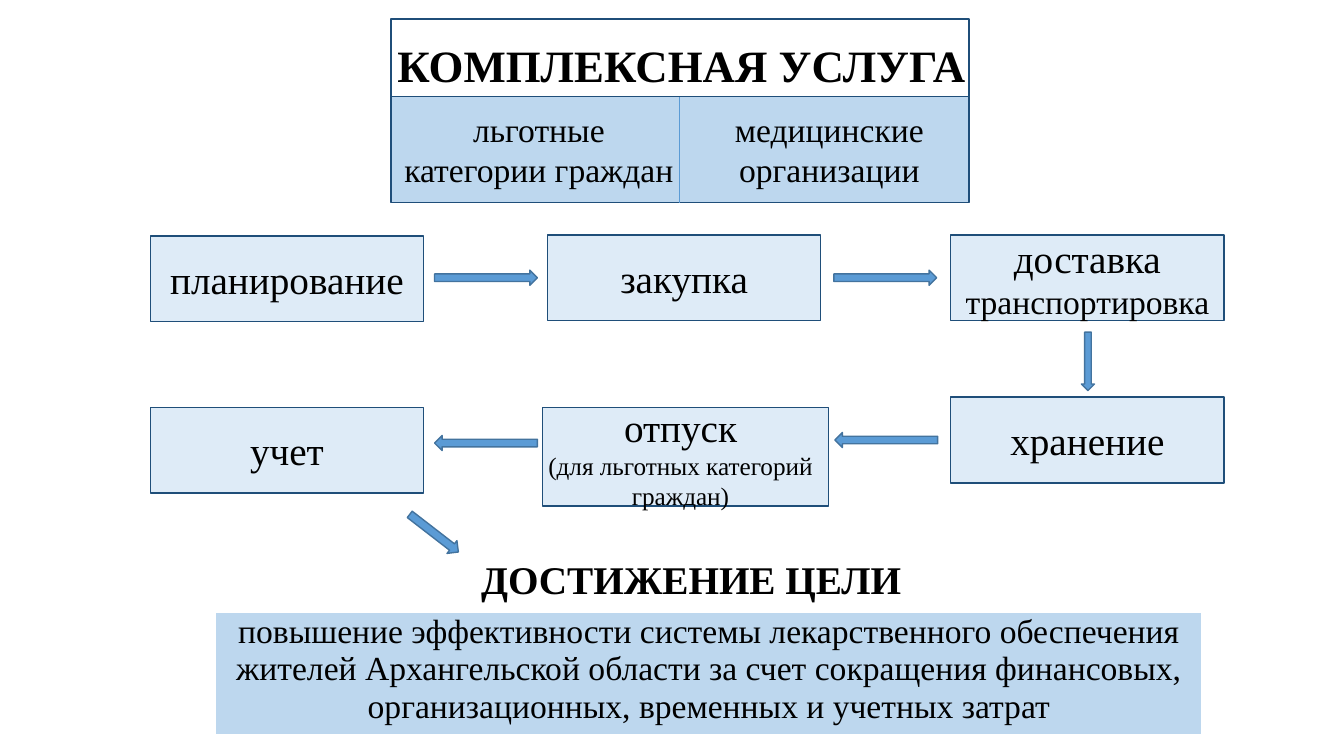
import pptx
import pptx.dml.color
import pptx.enum.shapes
import pptx.enum.text
import pptx.util
from lxml import etree

Inches = pptx.util.Inches
Pt = pptx.util.Pt
SHAPE = pptx.enum.shapes.MSO_SHAPE
ALIGN = pptx.enum.text.PP_ALIGN
ANCHOR = pptx.enum.text.MSO_ANCHOR

FONT = "Times New Roman"
COLORS = {
    "text": "000000",
    "white": "FFFFFF",
    "pale": "DEEBF7",
    "light": "BDD7EE",
    "border": "1F4E79",
    "arrow": "5B9BD5",
    "arrow_border": "43739E",
}
STEP_W, STEP_H = 2.71, 0.85
STEPS = [
    (1.49, 2.34, [("планирование", 28)]),
    (5.43, 2.33, [("закупка", 28)]),
    (9.43, 2.33, [("доставка", 28), ("транспортировка", 24)]),
    (9.43, 3.94, [("хранение", 28)]),
    (1.49, 4.04, [("учет", 28)]),
]
ARROWS = [
    (4.31, 2.68, 1.02, 0.15, 0),
    (8.27, 2.68, 1.02, 0.15, 0),
    (10.5, 3.52, 0.58, 0.13, 90),
    (8.28, 4.29, 1.02, 0.15, 180),
    (4.31, 4.32, 1.02, 0.15, 180),
    (4, 5.21, 0.61, 0.16, 37.7),
]
GOAL = (
    "повышение эффективности системы лекарственного обеспечения "
    "жителей Архангельской области за счет сокращения финансовых, "
    "организационных, временных и учетных затрат"
)


def rgb(name):
    return pptx.dml.color.RGBColor.from_string(COLORS[name])


def write(tf, lines, bold=False, align=ALIGN.CENTER):
    for i, (text, size) in enumerate(lines):
        p = tf.add_paragraph() if i else tf.paragraphs[0]
        p.alignment = align
        r = p.add_run()
        r.text = text
        r.font.name = FONT
        r.font.size = Pt(size)
        r.font.bold = bold
        r.font.color.rgb = rgb("text")


def set_margins(obj, left, top, right, bottom):
    obj.margin_left, obj.margin_top = Inches(left), Inches(top)
    obj.margin_right, obj.margin_bottom = Inches(right), Inches(bottom)


def add_shape(s, kind, at, fill, line):
    sp = s.shapes.add_shape(kind, *map(Inches, at))
    sp.shadow.inherit = False
    sp.fill.solid()
    sp.fill.fore_color.rgb = rgb(fill)
    sp.line.color.rgb = rgb(line)
    sp.line.width = Pt(1)
    return sp


def add_box(s, at, fill, lines=(), left=0.1, right=0.1):
    sp = add_shape(s, SHAPE.RECTANGLE, at, fill, "border")
    tf = sp.text_frame
    tf.word_wrap = True
    tf.vertical_anchor = ANCHOR.MIDDLE
    set_margins(tf, left, 0, right, 0)
    write(tf, lines)


def add_arrow(s, x, y, w, h, angle):
    sp = add_shape(s, SHAPE.RIGHT_ARROW, (x, y, w, h), "arrow", "arrow_border")
    sp.rotation = angle


def add_text(s, at, lines, bold=False, anchor=ANCHOR.TOP):
    tf = s.shapes.add_textbox(*map(Inches, at)).text_frame
    tf.word_wrap = True
    tf.vertical_anchor = anchor
    write(tf, lines, bold)


def add_divider(s, x, top, bottom):
    line = s.shapes.add_connector(
        pptx.enum.shapes.MSO_CONNECTOR.STRAIGHT,
        Inches(x), Inches(top), Inches(x), Inches(bottom),
    )
    line.line.color.rgb = rgb("arrow")
    line.line.width = Pt(0.5)
    etree.SubElement(line._element.spPr, pptx.oxml.ns.qn("a:effectLst"))


def set_title(s, at, text):
    title = s.shapes.title
    title.left, title.top, title.width, title.height = map(Inches, at)
    tf = title.text_frame
    tf.word_wrap = False
    tf.auto_size = pptx.enum.text.MSO_AUTO_SIZE.NONE
    tf.vertical_anchor = ANCHOR.TOP
    write(tf, [(text, 32)], bold=True, align=ALIGN.JUSTIFY)
    s.shapes._spTree.append(title._element)


def add_goal_table(s, at, text):
    table = s.shapes.add_table(1, 1, *map(Inches, at)).table
    table.first_row = False
    table.horz_banding = False
    cell = table.cell(0, 0)
    cell.fill.solid()
    cell.fill.fore_color.rgb = rgb("light")
    set_margins(cell, 0.01, 0.01, 0.01, 0)
    write(cell.text_frame, [(text, 24)])


def main():
    prs = pptx.Presentation()
    prs.slide_width, prs.slide_height = Inches(13.33), Inches(7.5)
    s = prs.slides.add_slide(prs.slide_layouts.get_by_name("Title Only"))

    add_box(s, (3.88, 0.19, 5.73, 0.77), "white")
    set_title(s, (3.84, 0.32, 5.89, 0.64), "КОМПЛЕКСНАЯ УСЛУГА")
    add_box(s, (3.88, 0.96, 5.73, 1.05), "light")
    add_divider(s, 6.74, 0.96, 2.01)
    add_text(s, (3.84, 1.03, 3.01, 0.91),
             [("льготные", 24), ("категории граждан", 24)])
    add_text(s, (6.72, 1.03, 3.01, 0.91),
             [("медицинские", 24), ("организации", 24)])

    for x, y, lines in STEPS:
        add_box(s, (x, y, STEP_W, STEP_H), "pale", lines)
    add_box(s, (5.38, 4.04, 2.84, 0.98), "pale",
            [("отпуск", 28), ("(для льготных категорий граждан)", 18)],
            left=0.05, right=0.15)
    for arrow in ARROWS:
        add_arrow(s, *arrow)

    add_text(s, (0.19, 5.51, 13.33, 0.46), [("ДОСТИЖЕНИЕ ЦЕЛИ", 28)],
             bold=True, anchor=ANCHOR.MIDDLE)
    add_goal_table(s, (2.14, 6.08, 9.78, 1.21), GOAL)
    prs.save("out.pptx")


if __name__ == "__main__":
    main()
